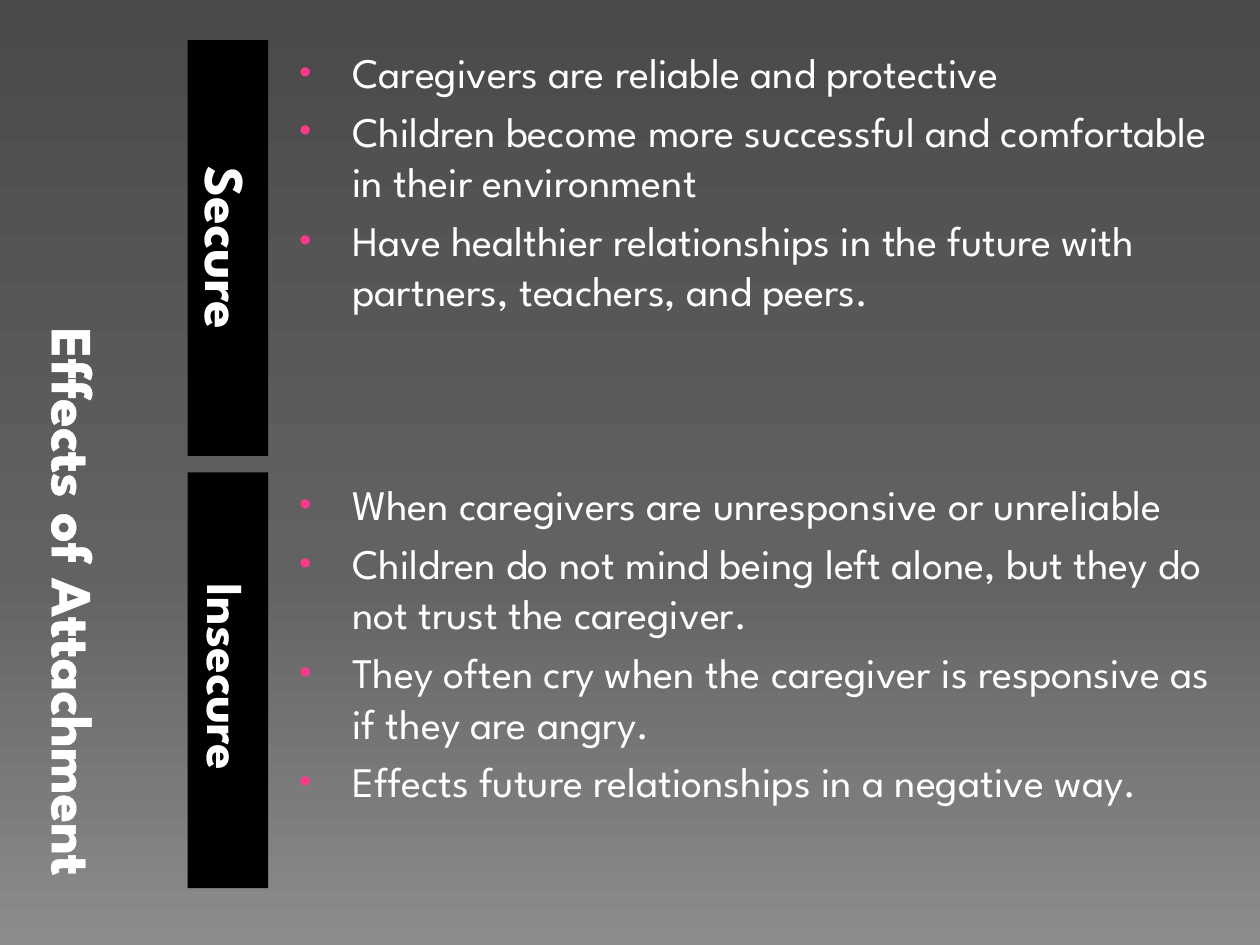
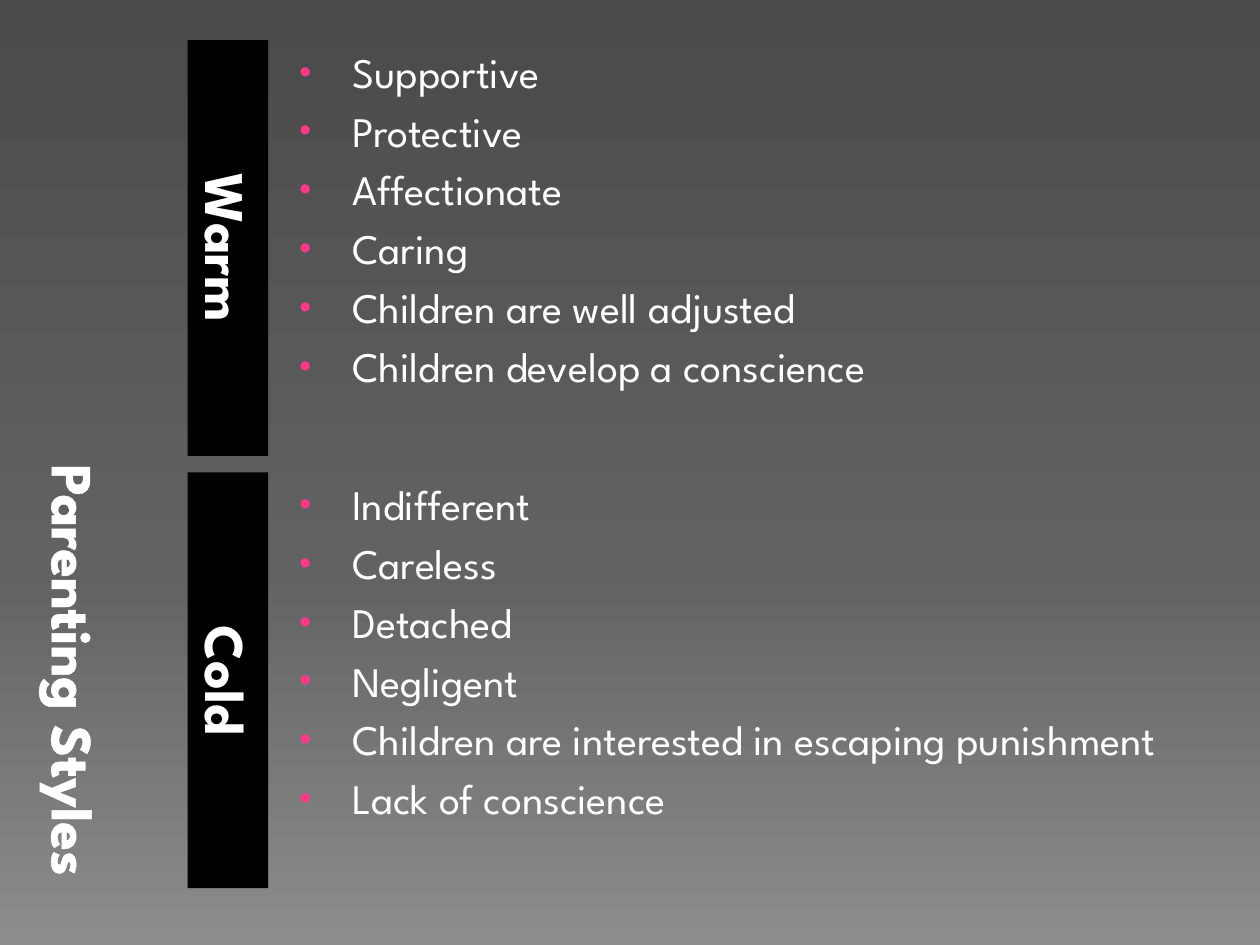
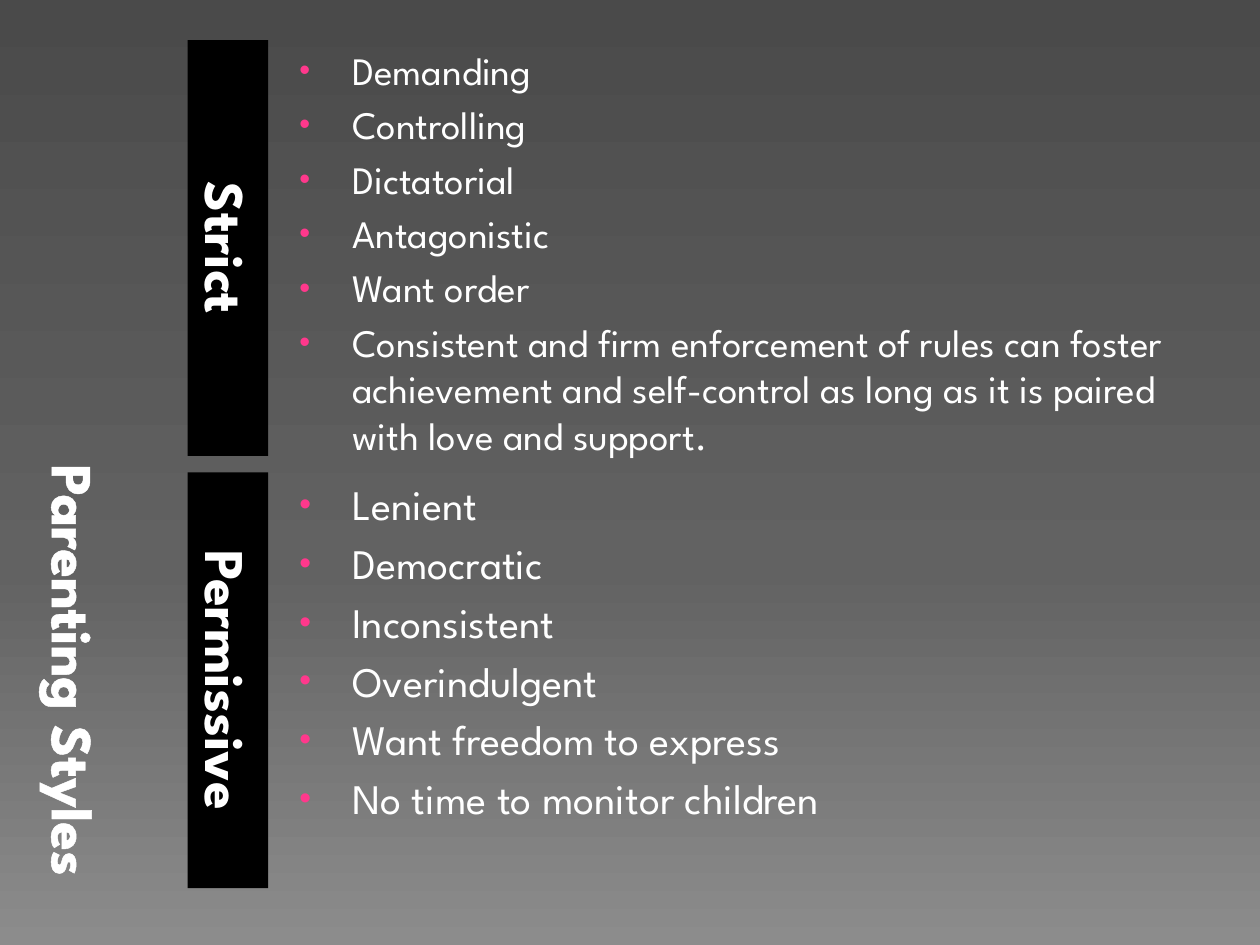
"""Build three slides that contrast attachment effects and parenting styles."""
from copy import deepcopy
from dataclasses import dataclass

from lxml import etree
from pptx import Presentation
from pptx import util as u
from pptx.dml.color import RGBColor
from pptx.enum import shapes, text
from pptx.oxml import ns

COLORS = {
    "sky": "4A4A4A",
    "middle": "626262",
    "ground": "8C8C8C",
    "label": "000000",
    "text": "FFFFFF",
    "bullet": "FF388C",
}
FONT = "League Spartan"
TOP, ROW_HEIGHT, ROW_PITCH = 23, 237.6, 247
LABEL_LEFT, LABEL_WIDTH = 107.25, 46
POINTS_LEFT, POINTS_WIDTH = 159, 540
TITLE_LEFT, TITLE_WIDTH = 19.5, 84.25


@dataclass
class Group:
    label: str
    points: list[str]
    label_size: float = 32
    points_size: float = 24
    label_tail: str = ""


@dataclass
class Topic:
    title: str
    groups: list[Group]


TOPICS = [
    Topic("Effects of Attachment", [
        Group("Secure", [
            "Caregivers are reliable and protective",
            "Children become more successful and comfortable in their environment",
            "Have healthier relationships in the future with partners, teachers, and peers.",
        ]),
        Group("Insecure", [
            "When caregivers are unresponsive or unreliable",
            "Children do not mind being left alone, but they do not trust the caregiver.",
            "They often cry when the caregiver is responsive as if they are angry.",
            "Effects future relationships in a negative way.",
        ], label_size=29.6, label_tail=" "),
    ]),
    Topic("Parenting Styles", [
        Group("Warm", [
            "Supportive", "Protective", "Affectionate", "Caring",
            "Children are well adjusted", "Children develop a conscience",
        ]),
        Group("Cold", [
            "Indifferent", "Careless", "Detached", "Negligent",
            "Children are interested in escaping punishment", "Lack of conscience",
        ]),
    ]),
    Topic("Parenting Styles", [
        Group("Strict", [
            "Demanding", "Controlling", "Dictatorial", "Antagonistic", "Want order",
            "Consistent and firm enforcement of rules can foster achievement and "
            "self-control as long as it is paired with love and support.",
        ], points_size=22.2),
        Group("Permissive", [
            "Lenient", "Democratic", "Inconsistent", "Overindulgent",
            "Want freedom to express", "No time to monitor children",
        ]),
    ]),
]


def color(name: str) -> RGBColor:
    return RGBColor.from_string(COLORS[name])


def add_xml(parent, tag: str, **attributes: str):
    return etree.SubElement(parent, ns.qn(tag), attributes)


def style(paragraph, size: float, bold: bool = False) -> None:
    paragraph.font.name = FONT
    paragraph.font.size = u.Pt(size)
    paragraph.font.bold = bold
    paragraph.font.color.rgb = color("text")


def turn(frame, anchor) -> None:
    frame.word_wrap = True
    frame.vertical_anchor = anchor
    frame._txBody.bodyPr.set("vert", "vert")


def paint_background(master) -> None:
    fill = master.background.fill
    fill.gradient()
    fill.gradient_angle = 270
    stop_list = fill.gradient_stops[0]._gs.getparent()
    stop_list.append(deepcopy(stop_list[-1]))
    for stop, name, position in zip(
            fill.gradient_stops, ("sky", "middle", "ground"), (0, 0.6, 1)):
        stop.color.rgb = color(name)
        stop.position = position


def add_title(slide, wording: str) -> None:
    height = ROW_PITCH + ROW_HEIGHT
    title = slide.shapes.add_textbox(
        u.Pt(TITLE_LEFT), u.Pt(TOP), u.Pt(TITLE_WIDTH), u.Pt(height))
    turn(title.text_frame, text.MSO_ANCHOR.BOTTOM)
    paragraph = title.text_frame.paragraphs[0]
    paragraph.alignment = text.PP_ALIGN.RIGHT
    style(paragraph, 33, bold=True)
    run = paragraph.add_run()
    run.text = wording
    outline = add_xml(run.font._element, "a:ln", w=str(u.Pt(0.5)))
    add_xml(add_xml(outline, "a:solidFill"), "a:srgbClr", val=COLORS["text"])


def add_label(slide, group: Group, top: float) -> None:
    label = slide.shapes.add_shape(
        shapes.MSO_SHAPE.RECTANGLE,
        u.Pt(LABEL_LEFT), u.Pt(top), u.Pt(LABEL_WIDTH), u.Pt(ROW_HEIGHT))
    label.shadow.inherit = False
    label.fill.solid()
    label.fill.fore_color.rgb = color("label")
    label.line.fill.background()
    turn(label.text_frame, text.MSO_ANCHOR.MIDDLE)
    paragraph = label.text_frame.paragraphs[0]
    paragraph.alignment = text.PP_ALIGN.CENTER
    style(paragraph, group.label_size, bold=True)
    paragraph.add_run().text = group.label
    if group.label_tail:
        tail = paragraph.add_run()
        tail.text = group.label_tail
        tail.font.size = u.Pt(group.label_size / 2)
        tail.font.bold = False


def add_bullet(paragraph) -> None:
    properties = paragraph._p.get_or_add_pPr()
    properties.set("marL", str(u.Pt(35.3)))
    properties.set("indent", str(u.Pt(-30.25)))
    add_xml(add_xml(properties, "a:buClr"), "a:srgbClr", val=COLORS["bullet"])
    add_xml(properties, "a:buSzPct", val="80000")
    add_xml(properties, "a:buFont", typeface="Arial")
    add_xml(properties, "a:buChar", char="•")


def add_points(slide, group: Group, top: float) -> None:
    points = slide.shapes.add_textbox(
        u.Pt(POINTS_LEFT), u.Pt(top), u.Pt(POINTS_WIDTH), u.Pt(ROW_HEIGHT))
    frame = points.text_frame
    frame.word_wrap = True
    frame.text = "\n".join(group.points)
    for paragraph in frame.paragraphs:
        paragraph.space_before = u.Pt(group.points_size * 0.2)
        add_bullet(paragraph)
        style(paragraph, group.points_size)


def main() -> None:
    deck = Presentation()
    deck.slide_width, deck.slide_height = u.Pt(720), u.Pt(540)
    paint_background(deck.slide_master)
    for topic in TOPICS:
        slide = deck.slides.add_slide(deck.slide_layouts[6])
        add_title(slide, topic.title)
        for row, group in enumerate(topic.groups):
            top = TOP + row * ROW_PITCH
            add_label(slide, group, top)
            add_points(slide, group, top)
    deck.save("out.pptx")


if __name__ == "__main__":
    main()
